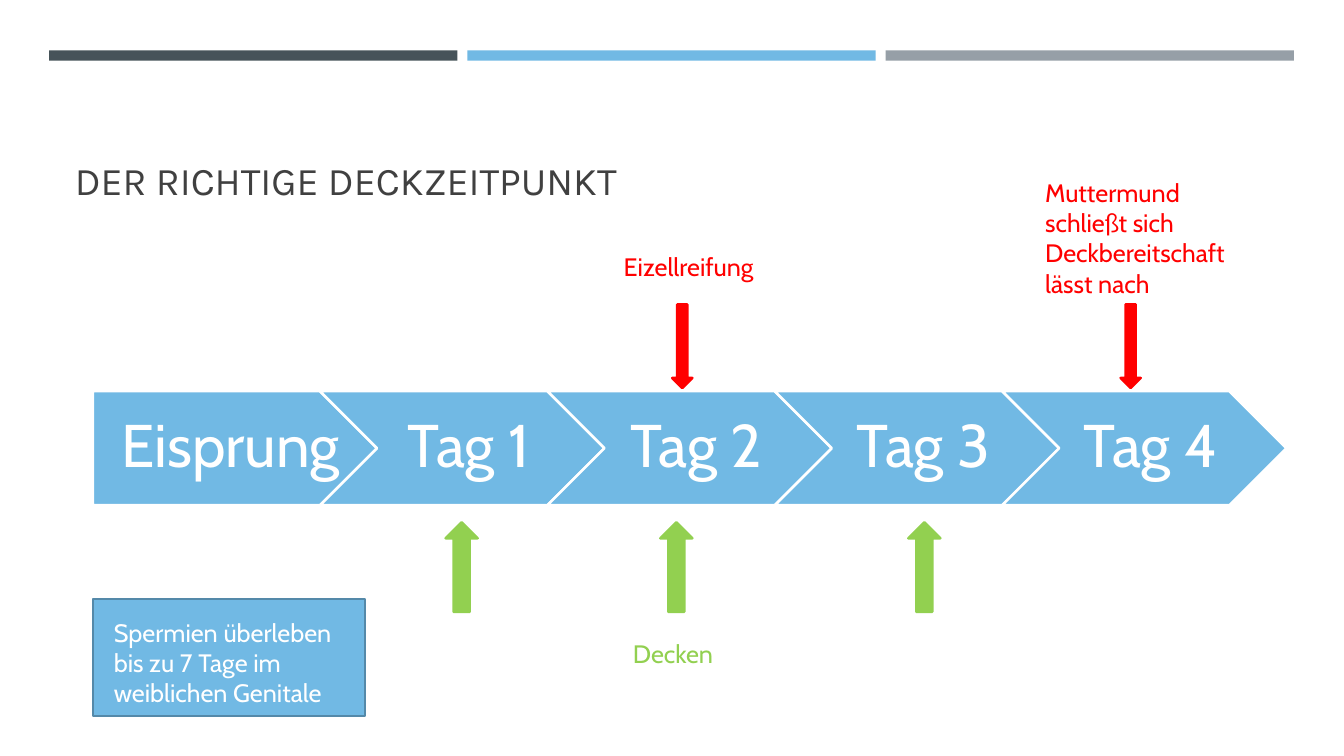
from dataclasses import dataclass
from pptx import Presentation
from pptx.dml.color import RGBColor
from pptx.enum.shapes import MSO_SHAPE
from pptx.enum.text import MSO_ANCHOR, MSO_AUTO_SIZE, PP_ALIGN
from pptx.util import Cm, Pt

RECT, PLATE, CHEVRON = MSO_SHAPE.RECTANGLE, MSO_SHAPE.PENTAGON, MSO_SHAPE.CHEVRON
DOWN, UP = MSO_SHAPE.DOWN_ARROW, MSO_SHAPE.UP_ARROW
TOP, MIDDLE, BOTTOM = MSO_ANCHOR.TOP, MSO_ANCHOR.MIDDLE, MSO_ANCHOR.BOTTOM
LEFT, CENTER = PP_ALIGN.LEFT, PP_ALIGN.CENTER


@dataclass(frozen=True)
class Theme:
    slate: str = "465359"
    blue: str = "71B9E4"
    gray: str = "969FA7"
    edge: str = "5489A9"
    ink: str = "404040"
    white: str = "FFFFFF"
    red: str = "FF0000"
    green: str = "92D050"
    head: str = "Karla"
    body: str = "Cabin"
    title: int = 28
    step: int = 43
    note: int = 18
    line: float = 1.75


theme = Theme()
deck = Presentation()
deck.slide_width, deck.slide_height = Cm(33.87), Cm(19.05)
slide = deck.slides.add_slide(deck.slide_layouts[5])


def draw(kind, x, y, w, h, fill, edge=None):
    shape = slide.shapes.add_shape(kind, Cm(x), Cm(y), Cm(w), Cm(h))
    shape.shadow.inherit = False
    shape.fill.solid()
    shape.fill.fore_color.rgb = RGBColor.from_string(fill)
    if edge:
        shape.line.color.rgb = RGBColor.from_string(edge)
        shape.line.width = Pt(theme.line)
    else:
        shape.line.fill.background()


def write(box, lines, size, color, font=theme.body, anchor=TOP, align=LEFT):
    frame = box.text_frame
    frame.word_wrap = True
    frame.auto_size = MSO_AUTO_SIZE.NONE
    frame.vertical_anchor = anchor
    for i, line in enumerate(lines):
        para = frame.add_paragraph() if i else frame.paragraphs[0]
        para.alignment = align
        run = para.add_run()
        run.text = line
        run.font.size = Pt(size)
        run.font.name = font
        run.font.color.rgb = RGBColor.from_string(color)
    return frame


# Bars along the top
for i, color in enumerate((theme.slate, theme.blue, theme.gray)):
    draw(RECT, 1.24 + i * 10.54, 1.27, 10.29, 0.26, color)

# Title
title = slide.shapes.title
title.left, title.top, title.width, title.height = Cm(1.63), Cm(1.96), Cm(30.63), Cm(3.3)
write(title, ["DER RICHTIGE DECKZEITPUNKT"], theme.title, theme.ink, theme.head, BOTTOM)

# Row of days
row, tall, pitch = 9.86, 2.87, 5.73
for i, day in enumerate(("Eisprung", "Tag 1", "Tag 2", "Tag 3", "Tag 4")):
    x = 2.34 + i * pitch
    draw(CHEVRON if i else PLATE, x, row, 7.16, tall, theme.blue, theme.white)
    inset, wide, pad = (tall / 2, 4.29, 0.48) if i else (0, 6.45, 0.64)
    box = slide.shapes.add_textbox(Cm(x + inset), Cm(row), Cm(wide), Cm(tall))
    frame = write(box, [day], theme.step, theme.white, anchor=MIDDLE, align=CENTER)
    frame.margin_left, frame.margin_right = Cm(pad), Cm(0.15)
    frame.margin_top = frame.margin_bottom = Cm(0.33)
    frame.paragraphs[0].line_spacing = 0.9

# Arrows above and below the row
for x in (16.94, 28.24):
    draw(DOWN, x, 7.67, 0.51, 2.11, theme.red, theme.red)
for x in (11.23, 16.64, 22.89):
    draw(UP, x, 13.16, 0.81, 2.26, theme.green, theme.green)

# Notes
draw(RECT, 2.34, 15.09, 6.86, 2.95, theme.blue, theme.edge)
notes = (
    (2.62, 15.42, 6.35, 2.57, theme.white,
     ["Spermien überleben bis zu 7 Tage im weiblichen Genitale"]),
    (15.47, 6.22, 5.49, 1.02, theme.red, ["Eizellreifung"]),
    (26.09, 4.34, 5.31, 3.33, theme.red,
     ["Muttermund schließt sich", "Deckbereitschaft lässt nach"]),
    (15.7, 15.95, 9.8, 1.02, theme.green, ["Decken"]),
)
for x, y, w, h, color, lines in notes:
    box = slide.shapes.add_textbox(Cm(x), Cm(y), Cm(w), Cm(h))
    write(box, lines, theme.note, color)

deck.save("out.pptx")
